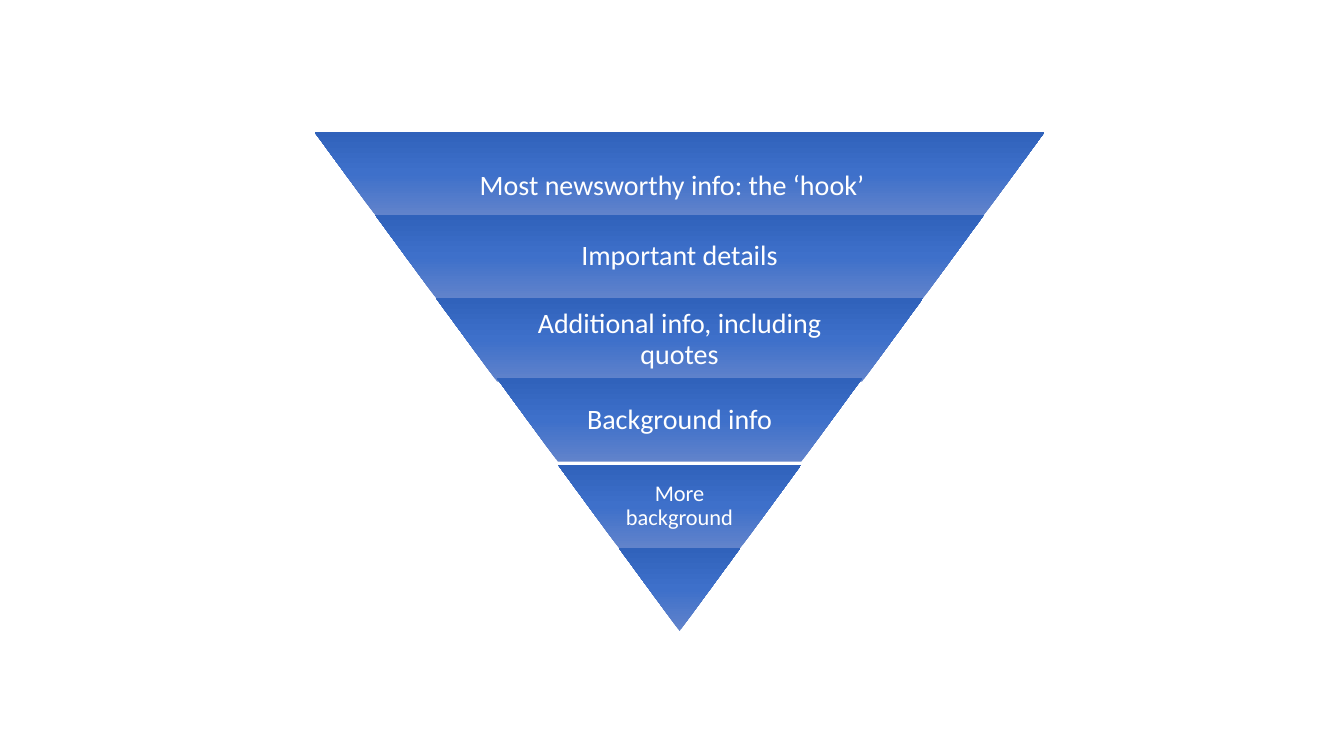
from copy import deepcopy

from pptx import Presentation
from pptx.dml.color import RGBColor
from pptx.enum.shapes import MSO_SHAPE as Preset
from pptx.enum.text import MSO_ANCHOR as Anchor, PP_ALIGN as Align
from pptx.util import Inches, Pt

WHITE = RGBColor(0xFF, 0xFF, 0xFF)
GRADIENT = (
    (0, RGBColor(0x61, 0x83, 0xCB)),
    (0.5, RGBColor(0x3E, 0x70, 0xCA)),
    (1, RGBColor(0x30, 0x62, 0xBB)),
)

# Label, font size, inset; the tip of the pyramid has no label.
LEVELS = (
    ("Most newsworthy info: the ‘hook’", 20, 0.03),
    ("Important details", 20, 0.03),
    ("Additional info, including quotes", 20, 0.03),
    ("Background info", 20, 0.03),
    ("More background", 16, 0.02),
    (None, None, None),
)
CENTER = 6.74
TOP = 1.31
FULL_WIDTH = 7.24
LEVEL_HEIGHT = 0.825
RAISED_LEVEL, RAISE = 3, 0.03
LABEL_SHARE = 0.65


def fill_with_gradient(fill):
    """Apply the three-stop gradient along the shape's height."""
    fill.gradient()
    fill.gradient_angle = 270
    stop_list = fill._fill._gradFill.gsLst
    stop_list.append(deepcopy(stop_list[-1]))
    for stop, (position, color) in zip(fill.gradient_stops, GRADIENT):
        stop.position = position
        stop.color.rgb = color


def add_band(group, top, width):
    band = group.shapes.add_shape(
        Preset.TRAPEZOID, Inches(CENTER - width / 2), Inches(top),
        Inches(width), Inches(LEVEL_HEIGHT))
    band.rotation = 180
    band.adjustments[0] = FULL_WIDTH / len(LEVELS) / 2 / LEVEL_HEIGHT
    band.shadow.inherit = False
    band.line.fill.background()
    fill_with_gradient(band.fill)


def add_label(group, top, width, text, size, inset):
    label = group.shapes.add_textbox(
        Inches(CENTER - width / 2), Inches(top),
        Inches(width), Inches(LEVEL_HEIGHT))
    frame = label.text_frame
    frame.word_wrap = True
    frame.vertical_anchor = Anchor.MIDDLE
    frame.margin_left = frame.margin_right = Inches(inset)
    frame.margin_top = frame.margin_bottom = Inches(inset)
    paragraph = frame.paragraphs[0]
    paragraph.alignment = Align.CENTER
    paragraph.line_spacing = 0.9
    paragraph.space_after = Pt(0.35 * size)
    paragraph.font.name = "Calibri"
    paragraph.font.color.rgb = WHITE
    run = paragraph.add_run()
    run.text = text
    run.font.size = Pt(size)
    return paragraph


def add_large_space(paragraph):
    """End the line with a 48 pt space, which lowers its baseline."""
    run = paragraph.add_run()
    run.text = " "
    run.font.size = Pt(48)


def main():
    presentation = Presentation()
    presentation.slide_width = Inches(13.33)
    presentation.slide_height = Inches(7.5)
    slide = presentation.slides.add_slide(presentation.slide_layouts[6])
    pyramid = slide.shapes.add_group_shape()

    for level, (text, size, inset) in enumerate(LEVELS):
        top = TOP + level * LEVEL_HEIGHT
        if level == RAISED_LEVEL:
            top -= RAISE
        width = FULL_WIDTH * (1 - level / len(LEVELS))
        add_band(pyramid, top, width)
        if text:
            paragraph = add_label(
                pyramid, top, width * LABEL_SHARE, text, size, inset)
            if level == 0:
                add_large_space(paragraph)

    presentation.save("out.pptx")


if __name__ == "__main__":
    main()
